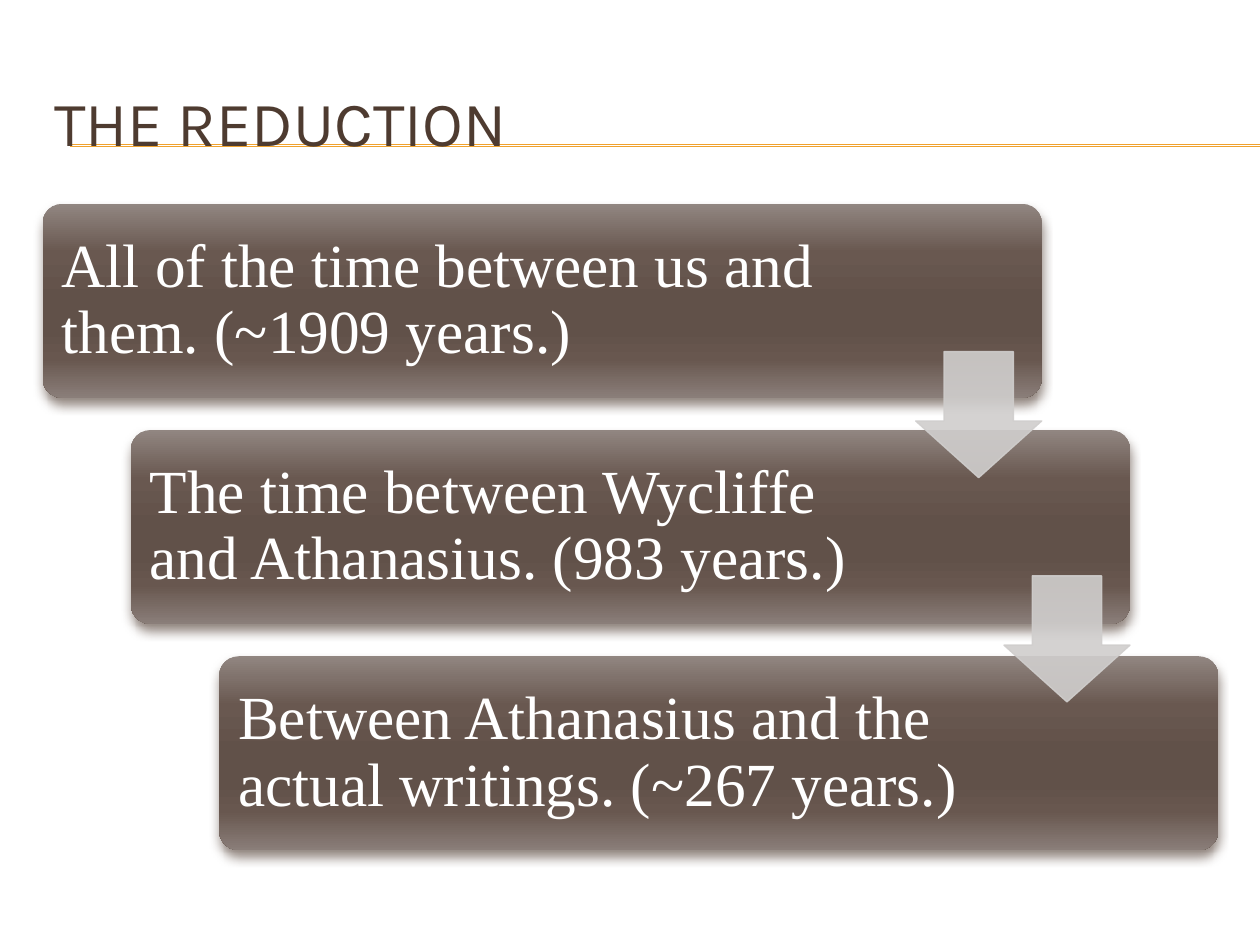
from dataclasses import dataclass

from lxml import etree
from pptx import Presentation
from pptx import util as u
from pptx.dml.color import RGBColor
from pptx.enum import shapes, text
from pptx.oxml import ns, parse_xml

BROWN, GOLD, GREY, WHITE = "4E3B30", "F0A22E", "D0CECD", "FFFFFF"
GRADIENT = ((0, "918681"), (25, "695850"), (50, "615149"),
            (65, "615149"), (80, "68574F"), (100, "8A7E79"))
BOX_W, BOX_H, ARROW = 20.14, 3.91, 2.54
LEFT, TOP, STEP_X, STEP_Y = 0.86, 4.11, 1.78, 4.56
ARROW_TOP, ARROW_STEP_Y = 7.09, 4.52


@dataclass
class Stage:
    words: str
    text_w: float


STAGES = (
    Stage("All of the time between us and them. (~1909 years.)", 16.15),
    Stage("The time between Wycliffe and Athanasius. (983 years.)", 15.82),
    Stage("Between Athanasius and the actual writings. (~267 years.)", 15.82),
)


def rgb(code: str) -> RGBColor:
    return RGBColor.from_string(code)


def add_rule(s, y: float) -> None:
    ln = s.shapes.add_connector(shapes.MSO_CONNECTOR.STRAIGHT,
                                u.Cm(1.42), u.Cm(y), u.Cm(25.4), u.Cm(y))
    ln.line.color.rgb = rgb(GOLD)
    ln.line.width = u.Pt(0.75)
    etree.SubElement(ln._element.spPr, ns.qn("a:effectLst"))


def add_text(s, x: float, y: float, w: float, h: float, words: str,
             font: str, size: float, color: str, inset: float):
    tf = s.shapes.add_textbox(u.Cm(x), u.Cm(y), u.Cm(w), u.Cm(h)).text_frame
    tf.word_wrap = True
    tf.vertical_anchor = text.MSO_ANCHOR.MIDDLE
    tf.margin_left = tf.margin_right = u.Cm(inset)
    tf.margin_top = tf.margin_bottom = u.Cm(inset)
    p = tf.paragraphs[0]
    r = p.add_run()
    r.text = words
    r.font.name, r.font.size = font, u.Pt(size)
    r.font.color.rgb = rgb(color)
    return p


def add_box(s, x: float, y: float) -> None:
    sp = s.shapes.add_shape(shapes.MSO_SHAPE.ROUNDED_RECTANGLE,
                            u.Cm(x), u.Cm(y), u.Cm(BOX_W), u.Cm(BOX_H))
    sp.adjustments[0] = 0.1
    sp.line.fill.background()
    stops = "".join(f'<a:gs pos="{pos * 1000}"><a:srgbClr val="{c}"/></a:gs>'
                    for pos, c in GRADIENT)
    spPr = sp._element.spPr
    spPr.insert(2, parse_xml(
        f'<a:gradFill {ns.nsdecls("a")} rotWithShape="1"><a:gsLst>{stops}</a:gsLst>'
        '<a:lin ang="5400000" scaled="0"/></a:gradFill>'))
    spPr.append(parse_xml(
        f'<a:effectLst {ns.nsdecls("a")}><a:outerShdw blurRad="{u.Pt(6)}" '
        f'dist="{u.Pt(4)}" dir="5400000" rotWithShape="0"><a:srgbClr val="{BROWN}">'
        '<a:alpha val="60000"/></a:srgbClr></a:outerShdw></a:effectLst>'))


def add_arrow(s, x: float, y: float) -> None:
    sp = s.shapes.add_shape(shapes.MSO_SHAPE.DOWN_ARROW,
                            u.Cm(x), u.Cm(y), u.Cm(ARROW), u.Cm(ARROW))
    sp.adjustments[0], sp.adjustments[1] = 0.55, 0.45
    sp.shadow.inherit = False
    sp.fill.solid()
    sp.fill.fore_color.rgb = rgb(GREY)
    sp.line.color.rgb = rgb(GREY)
    sp.line.width = u.Pt(0.79)
    for clr in sp._element.spPr.iter(ns.qn("a:srgbClr")):
        etree.SubElement(clr, ns.qn("a:alpha"), val="90000")


def main() -> None:
    """Build the slide of three descending stages joined by arrows."""
    prs = Presentation()
    prs.slide_width, prs.slide_height = u.Cm(25.4), u.Cm(19.05)
    s = prs.slides.add_slide(prs.slide_layouts[6])
    for y in (2.92, 2.95):
        add_rule(s, y)
    add_text(s, 0.84, 1.27, 24.13, 2.34, "THE REDUCTION", "Karla", 36, BROWN, 0.25)
    for i, stage in enumerate(STAGES):
        x, y = LEFT + i * STEP_X, TOP + i * STEP_Y
        add_box(s, x, y)
        p = add_text(s, x, y, stage.text_w, BOX_H, stage.words,
                     "Times New Roman", 35, WHITE, 0.38)
        p.line_spacing = 0.9
        p.space_after = u.Pt(12.25)
    for i in range(len(STAGES) - 1):
        add_arrow(s, LEFT + BOX_W - ARROW + i * STEP_X, ARROW_TOP + i * ARROW_STEP_Y)
    prs.save("out.pptx")


if __name__ == "__main__":
    main()
